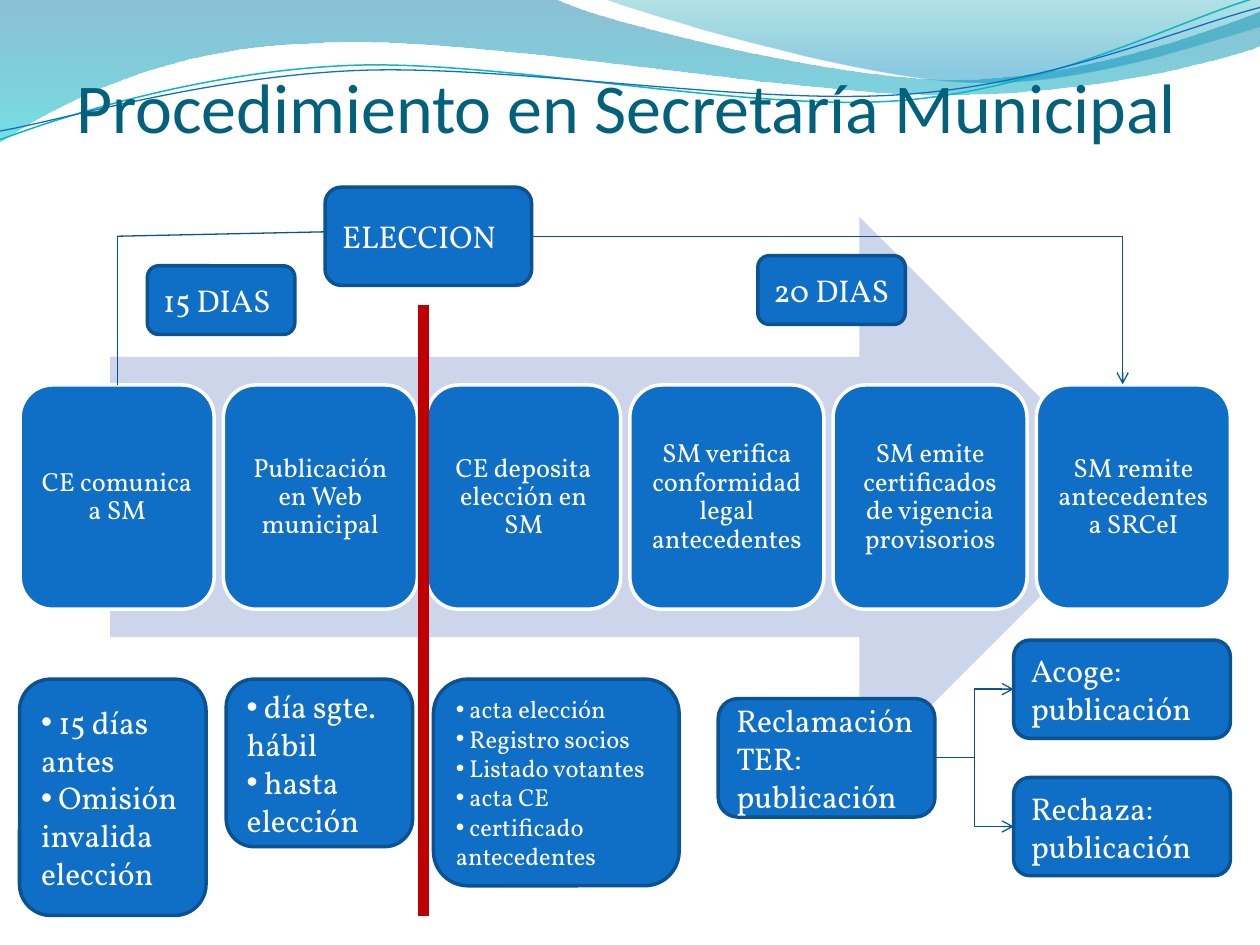
"""Build the slide on the election procedure at the municipal secretariat."""
import math

from lxml import etree
from pptx import Presentation
from pptx import util as u
from pptx.dml import color
from pptx.enum import shapes, text
from pptx.oxml import ns

presentation = Presentation()
presentation.slide_width, presentation.slide_height = u.Inches(10), u.Inches(7.5)
COLUMN, ROW = presentation.slide_width / 100, presentation.slide_height / 75


def colour(code):
    return color.RGBColor.from_string(code)


def grid(*values):
    return [round(value * (ROW if index % 2 else COLUMN)) for index, value in enumerate(values)]


slide = presentation.slides.add_slide(presentation.slide_layouts[5])

TILT = 2.7
COSINE, SINE = math.cos(math.radians(TILT)), math.sin(math.radians(TILT))
waves = [
    ([(0, 0), (44, -0.1), (47.6, 1.7, 66.4, 6.3, 75.8, 6.3), (85.3, 6.3, 95.8, 2.6, 100, 0.9),
      (100.1, 3.6), (98.3, 4.4, 87, 7.6, 74.6, 7.5), (62.2, 7.5, 38.2, 2.8, 25.7, 3.4),
      (12.9, 3.6, 4.6, 8.3, -0.1, 11.3)], [(0, "0074A1", 45), (1, "00C6CF", 55)], None),
    ([(47.9, -0.1), (50.9, 1.1, 68.2, 6.2, 76.9, 6.5), (85.6, 6.9, 96.1, 3.2, 100, 2.1),
      (100, 0)], [(0, "00A1A9", 30), (0.8, "008BBF", 45)], None),
    ([(0, 11.1), (4.8, 9.3, 15.8, 5.7, 27.7, 5.2), (39.5, 4.7, 59.3, 8.9, 71.3, 8),
      (83.3, 7.1, 93.8, 1.5, 99.8, -0.2)], None, ("0AB8BF", 0.85)),
    ([(0, 10.4), (4.7, 9.6, 16.4, 6.1, 28.3, 5.6), (40.3, 5.1, 59.7, 8.4, 71.7, 7.5),
      (83.6, 6.7, 94.1, 2.1, 100, 0.6)], None, ("0F6FC6", 0.75)),
]
for segments, stops, stroke in waves:
    points = [segment[i:i + 2] for segment in segments for i in range(0, len(segment), 2)]
    if stroke:
        points = [(50 + (x - 50) * COSINE - (y - 5.8) * SINE, 5.8 + (x - 50) * SINE + (y - 5.8) * COSINE)
                  for x, y in points]
    points = [grid(*point) for point in points]
    builder = slide.shapes.build_freeform(*points[0])
    builder.add_line_segments(points[1:], close=bool(stops))
    shape = builder.convert_to_shape()
    shape.shadow.inherit = False
    corners = list(shape._element.iter(ns.qn("a:lnTo")))
    for segment in segments[1:]:
        group, corners = corners[:len(segment) // 2], corners[len(segment) // 2:]
        if len(group) == 3:
            curve = etree.Element(ns.qn("a:cubicBezTo"))
            group[0].addprevious(curve)
            for corner in group:
                curve.append(corner[0])
                corner.getparent().remove(corner)
    if stops:
        shape.line.fill.background()
        shape.fill.gradient()
        shape.fill.gradient_angle = 270
        for stop, (position, code, opacity) in zip(shape.fill.gradient_stops, stops):
            stop.position, stop.color.rgb = position, colour(code)
        for element, (_, _, opacity) in zip(shape._element.iter(ns.qn("a:srgbClr")), stops):
            etree.SubElement(element, ns.qn("a:alpha"), val=str(opacity * 1000))
    else:
        shape.rotation = -TILT
        shape.fill.background()
        shape.line.color.rgb, shape.line.width = colour(stroke[0]), u.Pt(stroke[1])

title = slide.shapes.title
slide.shapes._spTree.append(title._element)
title.left, title.top, title.width, title.height = grid(4.7, 2.3, 90, 9.4)
title.text = "Procedimiento en Secretaría Municipal"
frame_format = {"vertical_anchor": text.MSO_ANCHOR.BOTTOM, "margin_left": 0, "margin_right": 0,
                "margin_top": u.Inches(0.05), "margin_bottom": 0, "word_wrap": True}
for name, value in frame_format.items():
    setattr(title.text_frame, name, value)
paragraph = title.text_frame.paragraphs[0]
paragraph.alignment = text.PP_ALIGN.CENTER
for name, value in {"size": u.Pt(40), "name": "Calibri"}.items():
    setattr(paragraph.runs[0].font, name, value)
paragraph.runs[0].font.color.rgb = colour("04617B")

arrow = slide.shapes.add_shape(shapes.MSO_SHAPE.RIGHT_ARROW, *grid(8.75, 17.2, 81.7, 44.5))
arrow.shadow.inherit = False
arrow.fill.solid()
arrow.fill.fore_color.rgb = colour("CCD5EA")
arrow.line.fill.background()

steps = ["CE comunica a SM", "Publicación en Web municipal", "CE deposita elección en SM",
         "SM verifica conformidad legal antecedentes", "SM emite certificados de vigencia provisorios",
         "SM remite antecedentes a SRCeI"]
step_boxes = [("step", (1.6 + 16.13 * index, 30.55, 15.4, 17.8), [label])
              for index, label in enumerate(steps)]
notes = [
    ("bullets", (1.55, 53.9, 14.8, 18.75), [" 15 días antes", " Omisión invalida elección"]),
    ("bullets", (17.95, 53.9, 14.8, 13.3), [" día sgte. hábil", " hasta elección"]),
    ("small bullets", (34.4, 53.9, 19.5, 16.4),
     [" acta elección", " Registro socios", " Listado votantes", " acta CE", " certificado antecedentes"]),
    ("plain", (25.8, 14.85, 16.4, 7.8), ["ELECCION"]),
    ("plain", (57, 55.45, 17.2, 9.4), ["Reclamación TER: publicación"]),
    ("plain", (80.45, 50.8, 17.2, 7.8), ["Acoge: publicación"]),
    ("plain", (80.45, 61.7, 17.2, 7.8), ["Rechaza: publicación"]),
    ("plain", (11.7, 21.1, 11.7, 5.45), ["15 DIAS"]),
    ("plain", (60.15, 20.3, 11.7, 5.45), ["20 DIAS"]),
]
sizes = {"step": 15, "small bullets": 14}
boxes = {}
for kind, area, labels in step_boxes + notes:
    shape = slide.shapes.add_shape(shapes.MSO_SHAPE.ROUNDED_RECTANGLE, *grid(*area))
    boxes[labels[0]] = shape
    is_step = kind == "step"
    shape.shadow.inherit = False
    shape.fill.solid()
    shape.fill.fore_color.rgb = colour("0F6FC6")
    shape.line.color.rgb = colour("FFFFFF" if is_step else "0B5292")
    shape.line.width = u.Pt(2)
    frame = shape.text_frame
    frame.word_wrap, frame.vertical_anchor = True, text.MSO_ANCHOR.MIDDLE
    if is_step:
        for side in ("left", "right", "top", "bottom"):
            setattr(frame, "margin_" + side, u.Inches(0.06))
    for index, label in enumerate(labels):
        paragraph = frame.add_paragraph() if index else frame.paragraphs[0]
        paragraph.alignment = text.PP_ALIGN.CENTER if is_step else text.PP_ALIGN.LEFT
        if is_step:
            paragraph.line_spacing = 0.9
        run = paragraph.add_run()
        run.text = label
        for name, value in {"size": u.Pt(sizes.get(kind, 18)), "name": "Vollkorn"}.items():
            setattr(run.font, name, value)
        run.font.color.rgb = colour("FFFFFF")
        if "bullets" in kind:
            properties = paragraph._p.get_or_add_pPr()
            etree.SubElement(properties, ns.qn("a:buFont"), typeface="Arial")
            etree.SubElement(properties, ns.qn("a:buChar"), char="•")

STRAIGHT, ELBOW = shapes.MSO_CONNECTOR.STRAIGHT, shapes.MSO_CONNECTOR.ELBOW
election, claim = boxes["ELECCION"], boxes["Reclamación TER: publicación"]
accepted, rejected = boxes["Acoge: publicación"], boxes["Rechaza: publicación"]
BLUE, RED = ("095295", 0.75), ("C00000", 6)
links = [
    (STRAIGHT, (9.3, 30.5, 9.3, 18.75), BLUE, False, (boxes[steps[0]], 0), None),
    (STRAIGHT, (9.3, 18.75, 25.8, 18.4), BLUE, False, None, None),
    (STRAIGHT, (89.1, 18.75, 42.2, 18.75), BLUE, False, None, (election, 3)),
    (STRAIGHT, (89.1, 18.75, 89.1, 30.5), BLUE, True, None, None),
    (STRAIGHT, (33.6, 24.2, 33.6, 72.7), RED, False, None, None),
    (ELBOW, (74.2, 60.2, 80.5, 54.7), BLUE, True, (claim, 3), (accepted, 1)),
    (ELBOW, (74.2, 60.2, 80.5, 65.6), BLUE, True, (claim, 3), (rejected, 1)),
]
for kind, ends, (code, width), has_arrow, begin, end in links:
    connector = slide.shapes.add_connector(kind, *grid(*ends))
    if begin:
        connector.begin_connect(*begin)
    if end:
        connector.end_connect(*end)
    connector.line.color.rgb, connector.line.width = colour(code), u.Pt(width)
    if has_arrow:
        etree.SubElement(connector.line._get_or_add_ln(), ns.qn("a:tailEnd"), type="arrow")
    etree.SubElement(connector._element.spPr, ns.qn("a:effectLst"))

presentation.save("out.pptx")
